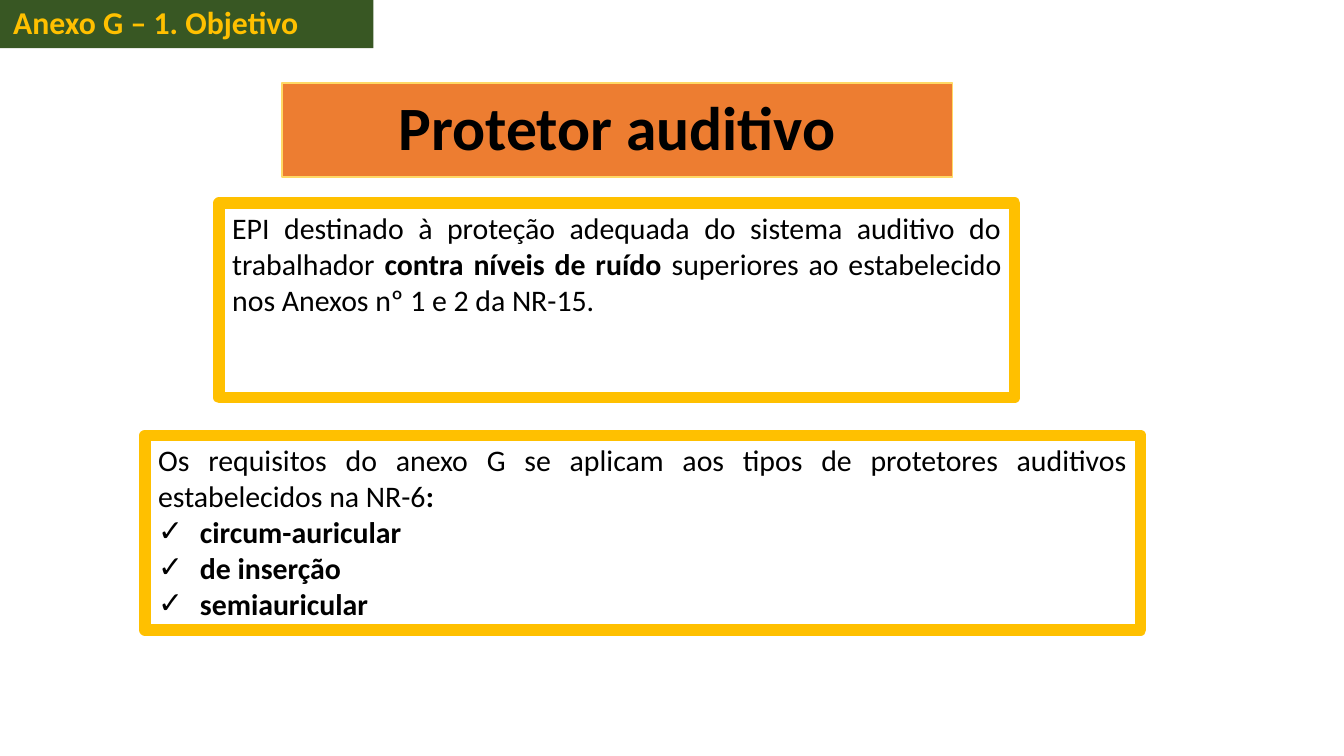
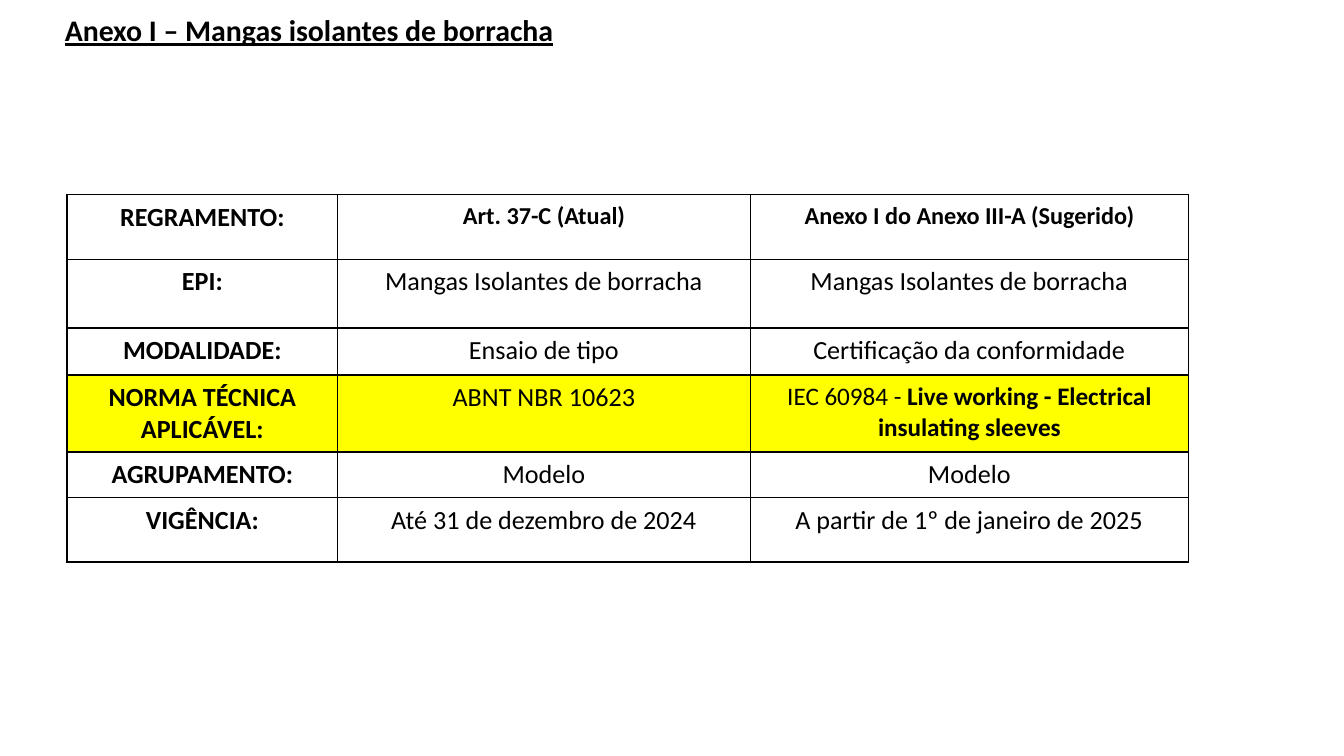
from dataclasses import dataclass

from lxml import etree
from pptx import Presentation
from pptx import util as u
from pptx.dml.color import RGBColor
from pptx.enum import shapes, text
from pptx.oxml import ns


# Colours and type sizes
@dataclass(frozen=True)
class Theme:
    font: str = "Calibri"
    black: str = "000000"
    green: str = "385723"
    gold: str = "FFC000"
    pale: str = "FFD966"
    orange: str = "ED7D31"
    yellow: str = "FFFF00"
    head: float = 33
    band: float = 17
    body: float = 16
    cell: float = 14
    mid: float = 13.5
    small: float = 13
    frame: float = 6
    thin: float = 0.75
    rule: float = 0.84


@dataclass(frozen=True)
class Area:
    left: float
    top: float
    width: float
    height: float

    def size(self) -> list:
        return [u.Cm(n) for n in (self.left, self.top, self.width, self.height)]


@dataclass(frozen=True)
class Panel:
    area: Area
    lines: tuple
    ticks: tuple = ()


@dataclass(frozen=True)
class Row:
    height: float
    label: str
    now: str
    next: str
    sizes: tuple = (14, 14, 14)
    fill: str = ""


T = Theme()
LEFT, MID, JUST = (text.PP_ALIGN.LEFT, text.PP_ALIGN.CENTER,
                   text.PP_ALIGN.JUSTIFY)
TICK = 0.79

# Slide content; asterisks enclose bold words
PANELS = (
    Panel(Area(4.14, 3.84, 15.04, 3.68),
          ("EPI destinado à proteção adequada do sistema auditivo do trabalhador "
           "*contra níveis de ruído* superiores ao estabelecido nos Anexos nº 1 "
           "e 2 da NR-15.",)),
    Panel(Area(2.74, 8.23, 18.82, 3.68),
          ("Os requisitos do anexo G se aplicam aos tipos de protetores "
           "auditivos estabelecidos na NR-6*:*",),
          ("*circum-auricular*", "*de inserção*", "*semiauricular*")),
)
COLS = (5.11, 7.8, 8.28)
ROWS = (
    Row(1.22, "*REGRAMENTO:*", "*Art. 37-C (Atual)*",
        "*Anexo I do Anexo III-A (Sugerido)*", (T.cell, T.small, T.small)),
    Row(1.3, "*EPI:*", "Mangas Isolantes de borracha",
        "Mangas Isolantes de borracha"),
    Row(0.89, "*MODALIDADE:*", "Ensaio de tipo", "Certificação da conformidade"),
    Row(1.45, "*NORMA TÉCNICA APLICÁVEL:*", "ABNT NBR 10623",
        "IEC 60984 - *Live working - Electrical insulating sleeves*",
        (T.cell, T.cell, T.mid), T.yellow),
    Row(0.84, "*AGRUPAMENTO:*", "Modelo", "Modelo"),
    Row(1.22, "*VIGÊNCIA:*", "Até 31 de dezembro de 2024",
        "A partir de 1º de janeiro de 2025"),
)


def rgb(code: str) -> RGBColor:
    return RGBColor.from_string(code)


def add(root, tag: str, **attrs):
    return etree.SubElement(root, ns.qn(tag), **attrs)


def write(par, words: str, *, size: float = T.body, color: str = T.black,
          align=LEFT, line: bool = False, space: float = 1.0,
          tick: bool = False) -> None:
    """Fill a paragraph, with bold between asterisks."""
    if tick:
        props = par._p.get_or_add_pPr()
        props.set("marL", str(u.Cm(TICK)))
        props.set("indent", str(-u.Cm(TICK)))
        add(add(props, "a:buClr"), "a:srgbClr", val=T.black)
        add(props, "a:buFont", typeface="Arial")
        add(props, "a:buChar", char="✓")
    par.alignment = align
    par.line_spacing = space
    for i, part in enumerate(words.split("*")):
        if part:
            run = par.add_run()
            run.text = part
            font = run.font
            font.name, font.size = T.font, u.Pt(size)
            font.bold, font.underline = i % 2 == 1, line
            font.color.rgb = rgb(color)


def paint(shape, fill: str = "", edge: str = "", width: float = 0) -> None:
    if fill:
        shape.fill.solid()
        shape.fill.fore_color.rgb = rgb(fill)
    else:
        shape.fill.background()
    if edge:
        shape.line.color.rgb = rgb(edge)
        shape.line.width = u.Pt(width)
    else:
        shape.line.fill.background()


def setup(frame, anchor) -> None:
    frame.word_wrap = True
    frame.auto_size = text.MSO_AUTO_SIZE.NONE
    frame.vertical_anchor = anchor


def box(slide, area: Area, anchor=text.MSO_ANCHOR.TOP):
    shape = slide.shapes.add_shape(shapes.MSO_SHAPE.RECTANGLE, *area.size())
    shape.shadow.inherit = False
    setup(shape.text_frame, anchor)
    return shape


def title(slide, area: Area, words: str, **form):
    shape = slide.shapes.title
    shape.left, shape.top, shape.width, shape.height = area.size()
    setup(shape.text_frame, text.MSO_ANCHOR.MIDDLE)
    write(shape.text_frame.paragraphs[0], words, space=0.9, **form)
    return shape


def panel(slide, item: Panel) -> None:
    shape = box(slide, item.area)
    paint(shape, edge=T.gold, width=T.frame)
    frame = shape.text_frame
    for i, words in enumerate(item.lines + item.ticks):
        par = frame.add_paragraph() if i else frame.paragraphs[0]
        write(par, words, align=JUST, tick=i >= len(item.lines))


def border(cell) -> None:
    props = cell._tc.get_or_add_tcPr()
    for side in ("a:lnL", "a:lnR", "a:lnT", "a:lnB"):
        edge = add(props, side, w=str(u.Pt(T.rule)))
        add(add(edge, "a:solidFill"), "a:srgbClr", val=T.black)


def grid(slide, left: float, top: float) -> None:
    area = Area(left, top, sum(COLS), sum(row.height for row in ROWS))
    table = slide.shapes.add_table(len(ROWS), len(COLS), *area.size()).table
    table.first_row = table.horz_banding = False
    for col, width in zip(table.columns, COLS):
        col.width = u.Cm(width)
    for r, row in enumerate(ROWS):
        table.rows[r].height = u.Cm(row.height)
        for c, words in enumerate((row.label, row.now, row.next)):
            cell = table.cell(r, c)
            border(cell)
            if row.fill:
                cell.fill.solid()
                cell.fill.fore_color.rgb = rgb(row.fill)
            else:
                cell.fill.background()
            write(cell.text_frame.paragraphs[0], words, size=row.sizes[c],
                  align=MID)


def main() -> None:
    deck = Presentation()
    deck.slide_width, deck.slide_height = u.Cm(25.4), u.Cm(14.29)
    plain = deck.slide_layouts[5]

    # Ear protection
    slide = deck.slides.add_slide(plain)
    band = box(slide, Area(0, 0, 7.06, 0.91), text.MSO_ANCHOR.MIDDLE)
    paint(band, T.green)
    write(band.text_frame.paragraphs[0], "*Anexo G – 1. Objetivo*",
          size=T.band, color=T.gold, space=0.9)
    head = title(slide, Area(5.33, 1.57, 12.67, 1.78), "*Protetor auditivo*",
                 size=T.head, align=MID)
    paint(head, T.orange, T.pale, T.thin)
    for item in PANELS:
        panel(slide, item)

    # Rubber sleeves
    slide = deck.slides.add_slide(plain)
    title(slide, Area(0.97, -0.3, 20.6, 1.8),
          "*Anexo I – Mangas isolantes de borracha*", line=True)
    grid(slide, 1.27, 3.68)

    deck.save("out.pptx")


if __name__ == "__main__":
    main()
